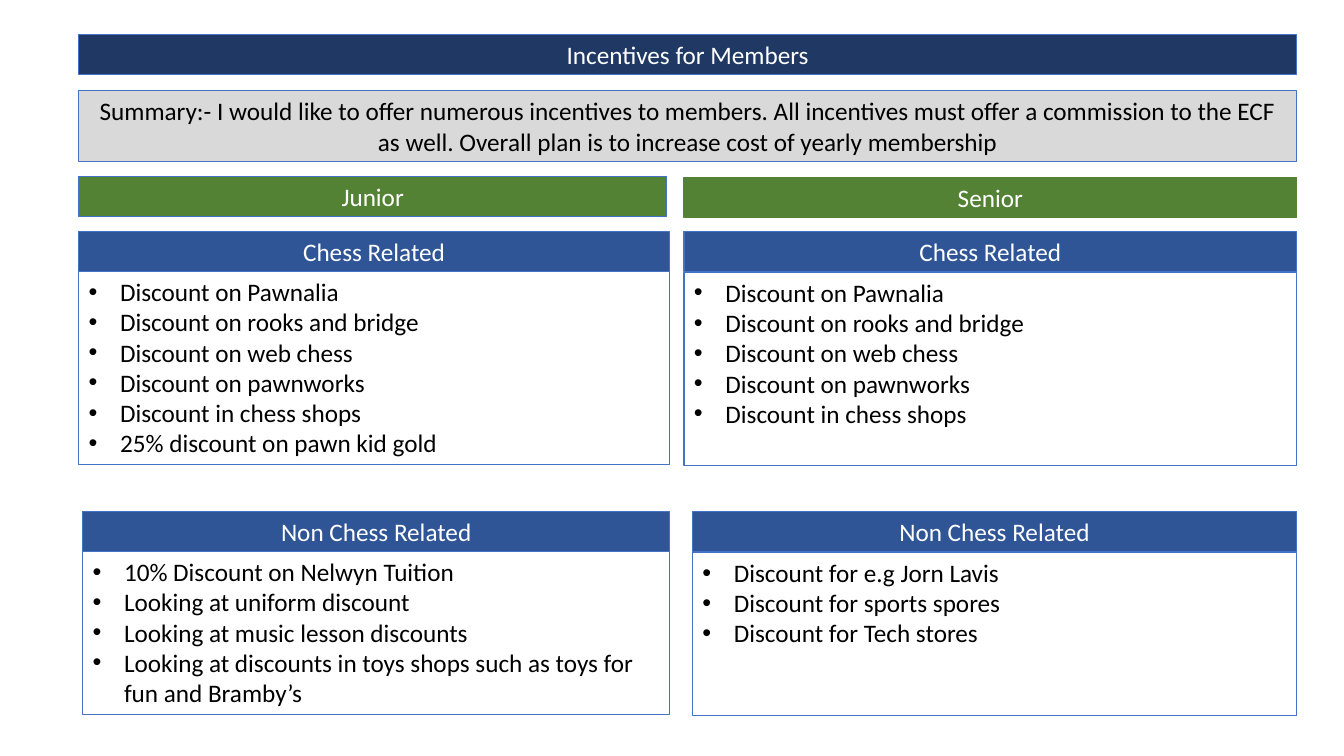
"""Build the slide on incentives for junior and senior members."""
import pptx
import pptx.util
import pptx.oxml.ns
import pptx.dml.color
import pptx.enum.shapes
import pptx.enum.text
from dataclasses import dataclass
from lxml import etree

Pt = pptx.util.Pt


@dataclass(frozen=True)
class Theme:
    font: str = "Calibri"
    size: int = 18
    navy: str = "203864"
    blue: str = "2F5597"
    green: str = "548235"
    grey: str = "D9D9D9"
    edge: str = "4472C4"
    white: str = "FFFFFF"
    black: str = "000000"


theme = Theme()
rgb = pptx.dml.color.RGBColor.from_string
deck = pptx.Presentation()
deck.slide_width, deck.slide_height = Pt(960), Pt(540)
slide = deck.slides.add_slide(deck.slide_layouts[6])


def add_box(text, *, at, fill=None, line=theme.edge, ink=theme.black, bullet=False):
    box = slide.shapes.add_shape(
        pptx.enum.shapes.MSO_SHAPE.RECTANGLE, *[Pt(side) for side in at])
    box.shadow.inherit = False
    if fill:
        box.fill.solid()
        box.fill.fore_color.rgb = rgb(fill)
    else:
        box.fill.background()
    box.line.color.rgb = rgb(line)
    box.line.width = Pt(0.75)
    frame = box.text_frame
    frame.word_wrap = True
    frame.vertical_anchor = pptx.enum.text.MSO_ANCHOR.TOP
    frame.text = text
    align = pptx.enum.text.PP_ALIGN
    for para in frame.paragraphs:
        para.alignment = align.LEFT if bullet else align.CENTER
        if bullet:
            props = para._p.get_or_add_pPr()
            props.set("marL", str(Pt(22.5)))
            props.set("indent", str(Pt(-22.5)))
            etree.SubElement(props, pptx.oxml.ns.qn("a:buFont"), typeface="Arial")
            etree.SubElement(props, pptx.oxml.ns.qn("a:buChar"), char="•")
        para.font.name = theme.font
        para.font.size = Pt(theme.size)
        para.font.color.rgb = rgb(ink)


left, wide, head = 56.2, 870, 28.4
add_box("Incentives for Members", at=(left, 24.8, wide, head),
        fill=theme.navy, ink=theme.white)
add_box("Summary:- I would like to offer numerous incentives to members. "
        "All incentives must offer a commission to the ECF as well. "
        "Overall plan is to increase cost of yearly membership",
        at=(left, 64.8, wide, 50.9), fill=theme.grey)

groups = [
    ("Junior", (left, 126, 420, head), theme.edge),
    ("Senior", (488.6, 126.9, 437.6, head), theme.green),
]
for name, place, edge in groups:
    add_box(name, at=place, fill=theme.green, line=edge, ink=theme.white)

shared = ["Discount on Pawnalia", "Discount on rooks and bridge",
          "Discount on web chess", "Discount on pawnworks",
          "Discount in chess shops"]
cards = [
    ("Chess Related", left, 165.6, 422, 193.9, 138,
     shared + ["25% discount on pawn kid gold"]),
    ("Chess Related", 488.6, 165.6, 437.6, 194.4, 138, shared),
    ("Non Chess Related", 59, 365.5, 419.5, 393.9, 116.6,
     ["10% Discount on Nelwyn Tuition", "Looking at uniform discount",
      "Looking at music lesson discounts",
      "Looking at discounts in toys shops such as toys for fun and Bramby’s"]),
    ("Non Chess Related", 494.6, 365.5, 431.6, 394.5, 116.6,
     ["Discount for e.g Jorn Lavis", "Discount for sports spores",
      "Discount for Tech stores"]),
]
for title, x, top, width, base, height, items in cards:
    add_box("\n".join(items), at=(x, base, width, height), bullet=True)
    add_box(title, at=(x, top, width, head), fill=theme.blue, ink=theme.white)

deck.save("out.pptx")
